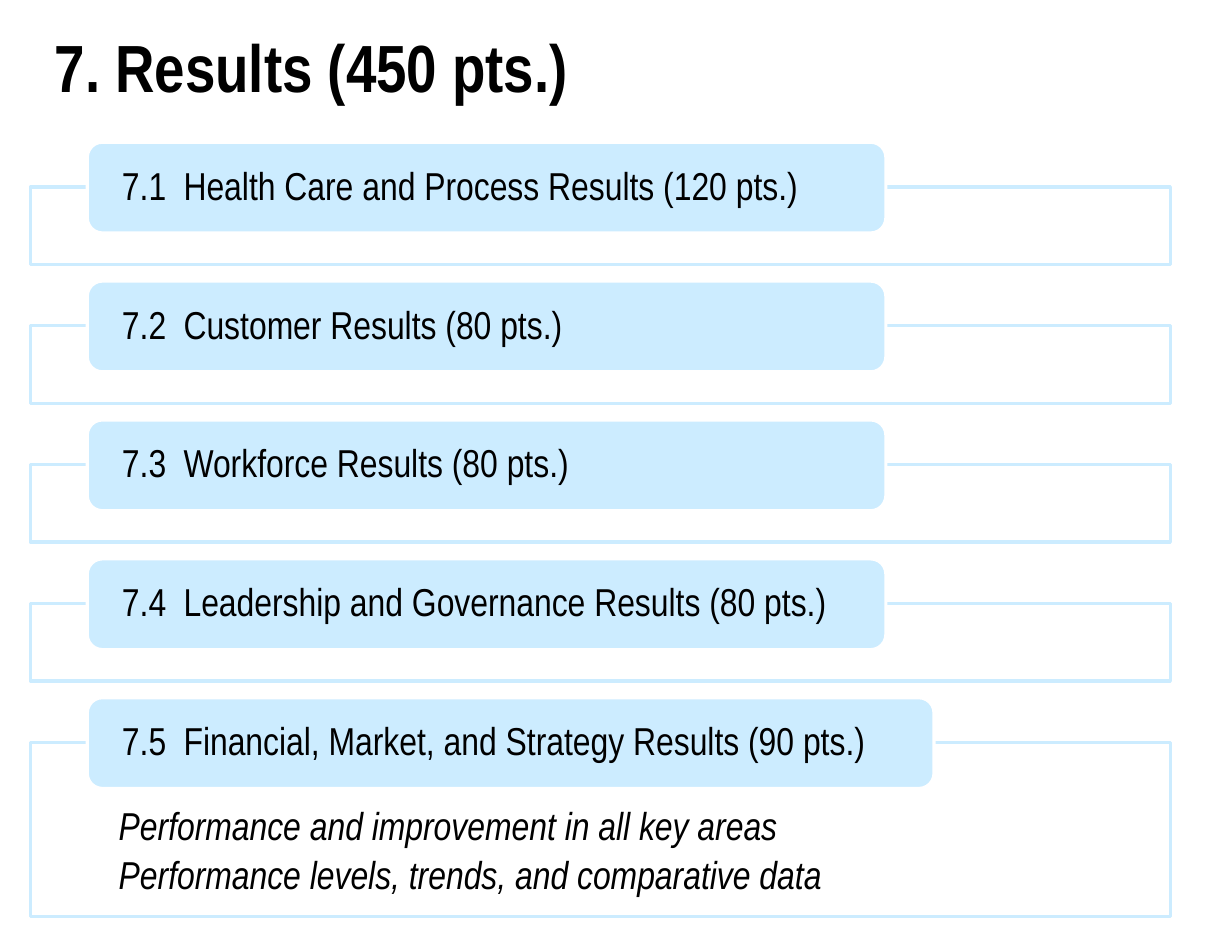
from dataclasses import dataclass

from lxml import etree
from pptx import Presentation
from pptx.dml.color import RGBColor
from pptx.enum.shapes import MSO_SHAPE
from pptx.enum.text import MSO_ANCHOR, PP_ALIGN
from pptx.oxml.ns import qn
from pptx.util import Inches, Pt

RECTANGLE = MSO_SHAPE.RECTANGLE
ROUNDED = MSO_SHAPE.ROUNDED_RECTANGLE
TOP, MIDDLE = MSO_ANCHOR.TOP, MSO_ANCHOR.MIDDLE
LEFT = PP_ALIGN.LEFT


@dataclass(frozen=True)
class Theme:
    font: str = "Arial Narrow"
    text: RGBColor = RGBColor(0x00, 0x00, 0x00)
    paper: RGBColor = RGBColor(0xFF, 0xFF, 0xFF)
    accent: RGBColor = RGBColor(0xCC, 0xEC, 0xFF)
    title_size: float = 42.9
    body_size: float = 25
    line_width: float = 2


THEME = Theme()

# Grid in inches: one row per results item
FRAME_LEFT, FRAME_WIDTH, FRAME_HEIGHT = 0.27, 10.18, 0.69
LABEL_LEFT, LABEL_WIDTH, LABEL_HEIGHT = 0.78, 7.13, 0.81
FIRST_ROW, ROW_STEP, FRAME_DROP = 1.27, 1.24, 0.4
LAST_LABEL_WIDTH, LAST_FRAME_HEIGHT = 7.56, 1.55
NUMBER_TAB = 0.55

ITEMS = [
    ("7.1", "Health Care and Process Results (120 pts.)"),
    ("7.2", "Customer Results (80 pts.)"),
    ("7.3", "Workforce Results (80 pts.)"),
    ("7.4", "Leadership and Governance Results (80 pts.)"),
    ("7.5", "Financial, Market, and Strategy Results (90 pts.)"),
]
DETAILS = [
    "Performance and improvement in all key areas",
    "Performance levels, trends, and comparative data",
]


def add_box(slide, kind, left, top, width, height, fill, line):
    shape = slide.shapes.add_shape(
        kind, Inches(left), Inches(top), Inches(width), Inches(height))
    shape.shadow.inherit = False
    shape.fill.solid()
    shape.fill.fore_color.rgb = fill
    shape.line.color.rgb = line
    shape.line.width = Pt(THEME.line_width)
    return shape


def set_text(shape, lines, size, insets, anchor=TOP, spacing=1.0, gap=0,
             tab=None, bold=False, italic=False):
    frame = shape.text_frame
    frame.word_wrap = True
    frame.vertical_anchor = anchor
    (frame.margin_left, frame.margin_top,
     frame.margin_right, frame.margin_bottom) = map(Inches, insets)
    frame.text = "\n".join(lines)
    for paragraph in frame.paragraphs:
        paragraph.alignment = LEFT
        paragraph.line_spacing = spacing
        paragraph.space_after = Pt(gap)
        if tab:
            add_tab(paragraph, tab)
        for run in paragraph.runs:
            run.font.name = THEME.font
            run.font.size = Pt(size)
            run.font.color.rgb = THEME.text
            run.font.bold = bold
            run.font.italic = italic


def add_tab(paragraph, position):
    properties = paragraph._p.get_or_add_pPr()
    tabs = etree.SubElement(properties, qn("a:tabLst"))
    etree.SubElement(tabs, qn("a:tab"), pos=str(Inches(position)), algn="l")


def add_title(slide, text):
    title = slide.shapes.add_textbox(
        Inches(0.39), Inches(0.18), Inches(8), Inches(0.82))
    set_text(title, [text], THEME.title_size, (0.1, 0.05, 0.1, 0.05), bold=True)


def add_item(slide, row, number, name, label_width=LABEL_WIDTH,
             frame_height=FRAME_HEIGHT, details=()):
    top = FIRST_ROW + row * ROW_STEP
    # Outlined frame, with the details if there are any
    frame = add_box(slide, RECTANGLE, FRAME_LEFT, top + FRAME_DROP,
                    FRAME_WIDTH, frame_height, THEME.paper, THEME.accent)
    if details:
        set_text(frame, details, THEME.body_size, (0.79, 0.57, 0.79, 0.19),
                 spacing=0.9, gap=5, italic=True)
    # Label over the frame's upper edge
    label = add_box(slide, ROUNDED, LABEL_LEFT, top, label_width,
                    LABEL_HEIGHT, THEME.accent, THEME.paper)
    set_text(label, [f"{number}\t{name}"], THEME.body_size, (0.27, 0, 0.27, 0),
             anchor=MIDDLE, spacing=0.9, tab=NUMBER_TAB)


def main():
    presentation = Presentation()
    presentation.slide_width = Inches(11)
    presentation.slide_height = Inches(8.5)
    slide = presentation.slides.add_slide(presentation.slide_layouts[6])

    add_title(slide, "7. Results (450 pts.)")
    for row, (number, name) in enumerate(ITEMS[:-1]):
        add_item(slide, row, number, name)
    add_item(slide, len(ITEMS) - 1, *ITEMS[-1], LAST_LABEL_WIDTH,
             LAST_FRAME_HEIGHT, DETAILS)

    presentation.save("out.pptx")


if __name__ == "__main__":
    main()
